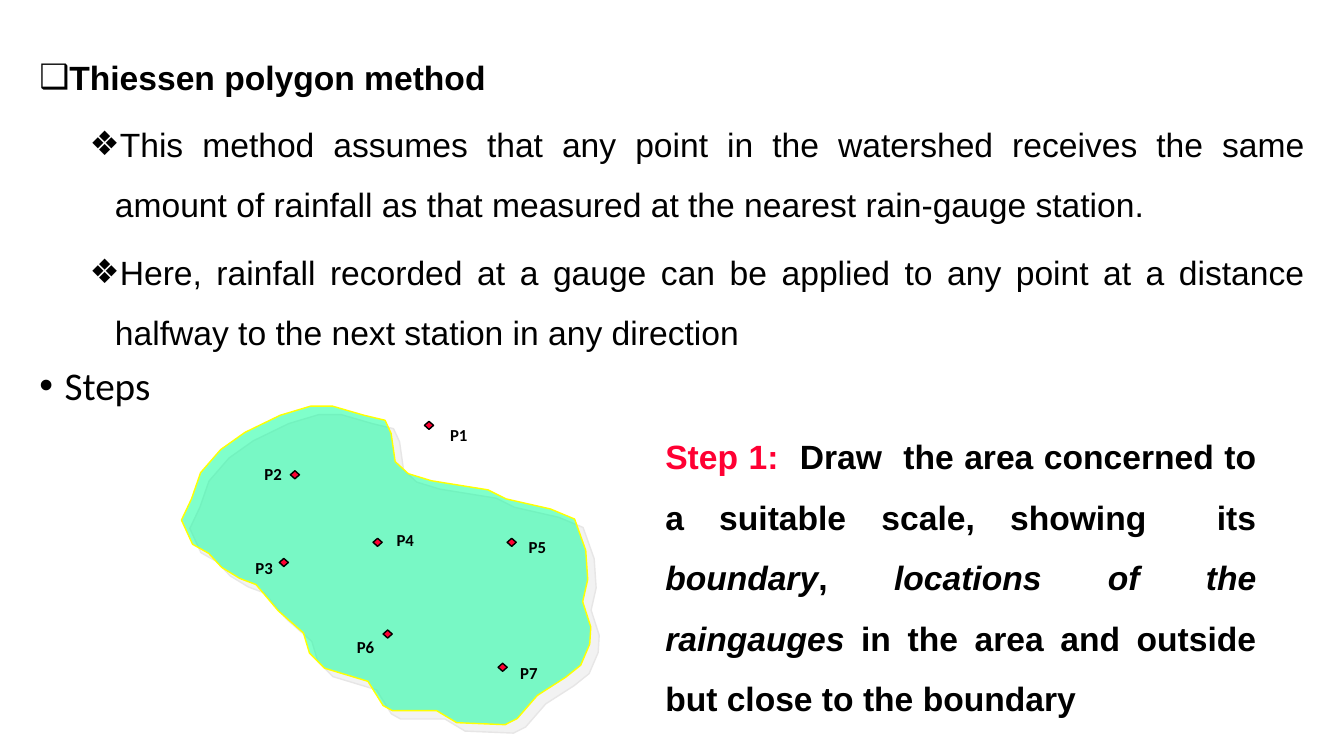
from lxml import etree
from pptx import Presentation
from pptx.dml.color import RGBColor
from pptx.enum.shapes import MSO_SHAPE
from pptx.enum.text import MSO_AUTO_SIZE, PP_ALIGN
from pptx.oxml.ns import qn
from pptx.util import Inches, Pt

DIAMOND = MSO_SHAPE.DIAMOND
FIXED = MSO_AUTO_SIZE.NONE
GROW = MSO_AUTO_SIZE.SHAPE_TO_FIT_TEXT
LEFT, CENTER, JUSTIFY = PP_ALIGN.LEFT, PP_ALIGN.CENTER, PP_ALIGN.JUSTIFY

COLORS = {
    "text": "000000",
    "accent": "FF0033",
    "area": "00FF99",
    "boundary": "FFFF00",
    "shadow": "E7E6E6",
}

BODY = {"name": "Arial", "size": Pt(24), "bold": False}
STRONG = {**BODY, "bold": True}
ITALIC = {**STRONG, "italic": True}
STEPS = {"name": "Calibri", "size": Pt(28), "bold": False}
LABEL = {"name": "Calibri", "size": Pt(12), "bold": True}

OUTLINE = [
    (3.08, 4.03), (2.78, 4.12), (2.43, 4.29), (2.19, 4.46), (1.99, 4.69),
    (1.9, 4.95), (1.8, 5.16), (1.91, 5.4), (2.07, 5.49), (2.2, 5.63),
    (2.38, 5.74), (2.54, 5.8), (2.76, 6.06), (3.01, 6.28), (3.07, 6.48),
    (3.22, 6.63), (3.65, 6.76), (3.8, 7), (3.89, 7.05), (4.33, 7.05),
    (4.53, 7.17), (5.01, 7.19), (5.13, 7.13), (5.33, 6.9), (5.61, 6.72),
    (5.76, 6.6), (5.85, 6.39), (5.86, 6.22), (5.78, 5.97), (5.83, 5.75),
    (5.81, 5.46), (5.7, 5.15), (5.46, 5.05), (5.02, 4.95), (4.84, 4.86),
    (4.28, 4.77), (4.05, 4.7), (3.92, 4.58), (3.88, 4.3), (3.82, 4.17),
    (3.61, 4.12), (3.3, 4.03),
]

GAUGES = [
    ("P1", 4.21, 4.18, 4.11, 4.16, 0.88),
    ("P2", 2.88, 4.67, 2.36, 4.55, 0.7),
    ("P3", 2.77, 5.54, 2.27, 5.48, 0.7),
    ("P4", 3.7, 5.34, 3.67, 5.21, 0.7),
    ("P5", 5.03, 5.34, 4.98, 5.28, 0.7),
    ("P6", 3.8, 6.25, 3.23, 6.27, 0.79),
    ("P7", 4.94, 6.58, 4.72, 6.53, 1.05),
]

POINTS = [
    ("❑", 0, 0.25, JUSTIFY, 1.5, 10, "Thiessen polygon method ", STRONG),
    ("❖", 1, 0.75, JUSTIFY, 1.5, 5,
     "This method assumes that any point in the watershed receives the same "
     "amount of rainfall as that measured at the nearest rain-gauge station.", BODY),
    ("❖", 1, 0.75, JUSTIFY, 1.5, 5,
     "Here, rainfall recorded at a gauge can be applied to any point at a "
     "distance halfway to the next station in any direction", BODY),
    ("•", 0, 0.25, LEFT, 0.9, 10, "Steps", STEPS),
]

STEP_ONE = [
    ("Step 1:", STRONG, "accent"),
    ("  Draw  the area concerned to a suitable scale, showing  its", STRONG, "text"),
    (" boundary", ITALIC, "text"),
    (", ", STRONG, "text"),
    ("locations of the raingauges", ITALIC, "text"),
    (" in the area and outside but close to the boundary", STRONG, "text"),
]


def rgb(name):
    return RGBColor.from_string(COLORS[name])


def apply(target, values):
    for name, value in values.items():
        setattr(target, name, value)


class RainfallSlide:
    def __init__(self, deck):
        self.page = deck.slides.add_slide(deck.slide_layouts[1])
        title = self.page.shapes.title.element
        title.getparent().remove(title)
        self.map = self.page.shapes.add_group_shape().shapes

    def span(self, para, text, style, color="text"):
        span = para.add_run()
        span.text = text
        apply(span.font, style)
        span.font.color.rgb = rgb(color)

    def bullets(self, left, top, width, height, points):
        box = self.page.placeholders[1]
        apply(box, {"left": Inches(left), "top": Inches(top),
                    "width": Inches(width), "height": Inches(height)})
        frame = box.text_frame
        frame.auto_size = FIXED
        for index, (mark, level, margin, align, spacing, before, text, style) in enumerate(points):
            para = frame.add_paragraph() if index else frame.paragraphs[0]
            apply(para, {"level": level, "alignment": align,
                         "line_spacing": spacing, "space_before": Pt(before)})
            settings = para._p.get_or_add_pPr()
            settings.set("marL", str(Inches(margin)))
            settings.set("indent", str(Inches(-0.25)))
            etree.SubElement(settings, qn("a:buFont"), typeface="Arial")
            etree.SubElement(settings, qn("a:buChar"), char=mark)
            self.span(para, text, style)

    def text(self, shapes, left, top, width, height, spans, format_values):
        box = shapes.add_textbox(Inches(left), Inches(top), Inches(width), Inches(height))
        apply(box.text_frame, {"word_wrap": True, "auto_size": GROW})
        para = box.text_frame.paragraphs[0]
        apply(para, format_values)
        for text, style, color in spans:
            self.span(para, text, style, color)

    def paint(self, shape, fill, line):
        shape.shadow.inherit = False
        shape.fill.solid()
        shape.fill.fore_color.rgb = rgb(fill)
        shape.line.color.rgb = rgb(line)
        shape.line.width = Pt(1)

    def area(self, points):
        corners = [(Inches(x), Inches(y)) for x, y in points]
        builder = self.map.build_freeform(*corners[0])
        builder.add_line_segments(corners[1:], close=True)
        shape = builder.convert_to_shape()
        self.paint(shape, "area", "boundary")
        properties = shape.element.spPr
        fill = properties.find(qn("a:solidFill")).find(qn("a:srgbClr"))
        etree.SubElement(fill, qn("a:alpha"), val="50000")
        shadow = etree.SubElement(properties.find(qn("a:effectLst")), qn("a:outerShdw"),
                                  dist=str(Pt(8.5)), dir="2700000", algn="ctr",
                                  rotWithShape="0")
        etree.SubElement(shadow, qn("a:srgbClr"), val=COLORS["shadow"])

    def gauge(self, left, top):
        shape = self.map.add_shape(DIAMOND, Inches(left), Inches(top), Inches(0.09), Inches(0.08))
        self.paint(shape, "accent", "text")


def main():
    deck = Presentation()
    apply(deck, {"slide_width": Inches(13.33), "slide_height": Inches(7.5)})
    slide = RainfallSlide(deck)
    slide.bullets(0.29, 0.31, 12.75, 7.1, POINTS)
    slide.area(OUTLINE)
    for name, left, top, label_left, label_top, label_width in GAUGES:
        slide.gauge(left, top)
        slide.text(slide.map, label_left, label_top, label_width, 0.3,
                   [(name, LABEL, "text")], {"alignment": CENTER})
    slide.text(slide.page.shapes, 6.5, 4.08, 6.06, 3.06, STEP_ONE,
               {"alignment": JUSTIFY, "line_spacing": 1.5})
    deck.save("out.pptx")


if __name__ == "__main__":
    main()
